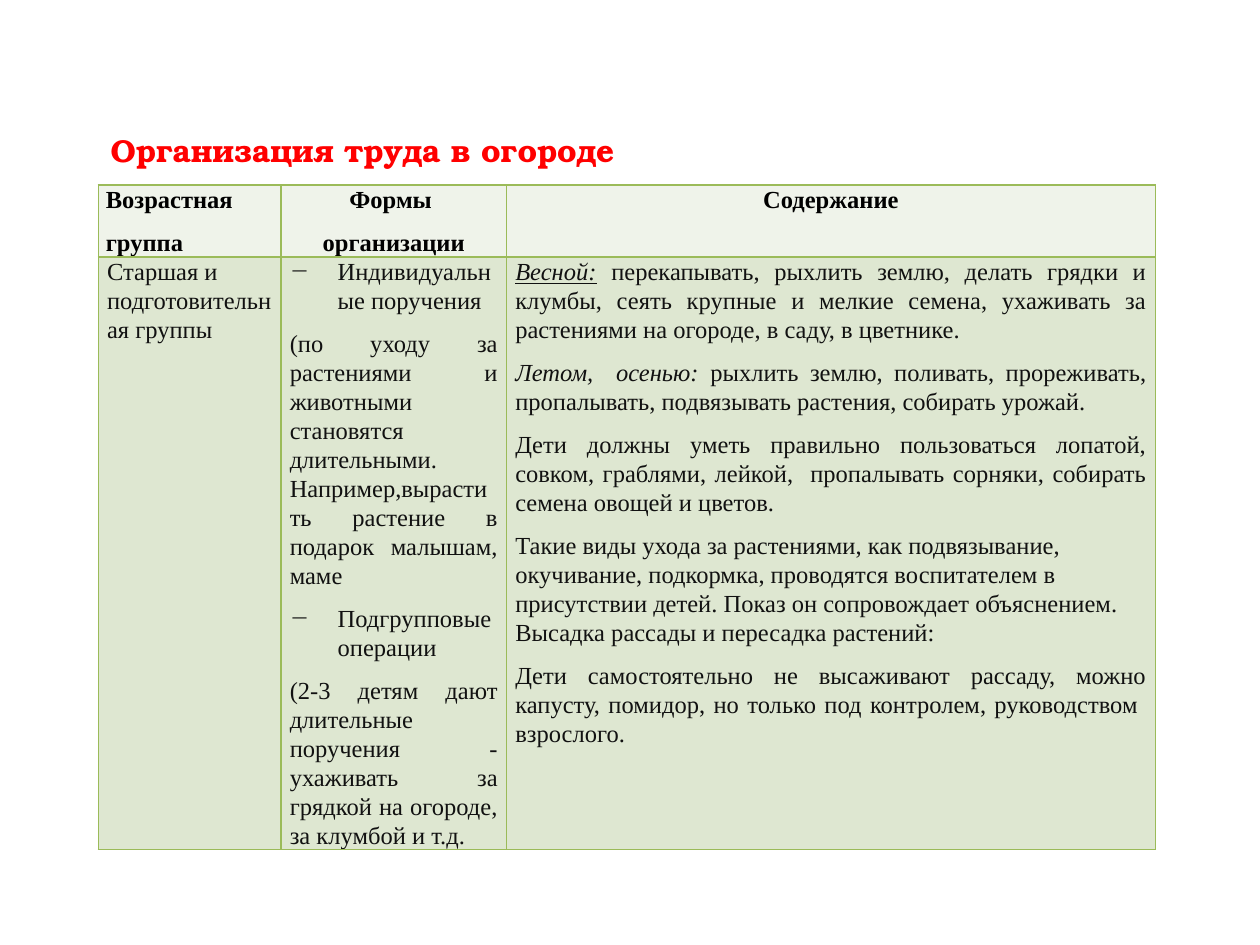
from dataclasses import dataclass

from lxml import etree
from pptx import Presentation
from pptx.dml.color import RGBColor
from pptx.enum import text
from pptx.oxml import ns
from pptx.util import Inches, Pt

HUES = {"title": "FF0000", "head": "000000", "body": "111111",
        "pale": "EFF3EA", "green": "DEE7D1", "line": "9BBB59"}
SERIF = "Times New Roman"
LEFT, MID, JUST = text.PP_ALIGN.LEFT, text.PP_ALIGN.CENTER, text.PP_ALIGN.JUSTIFY


@dataclass
class Para:
    words: str
    align: int = JUST
    lead: str = ""
    under: bool = False
    dash: bool = False


def add(parent, tag: str, **attrs):
    return etree.SubElement(parent, ns.qn(tag), attrs)


def write(frame, paras: list[Para], *, size: float = 14, font: str = SERIF,
          hue: str = "body", bold: bool = False, space: float = 1.07,
          after: float = 8) -> None:
    for n, item in enumerate(paras):
        para = frame.paragraphs[0] if n == 0 else frame.add_paragraph()
        para.alignment = item.align
        para.line_spacing = space
        para.space_after = Pt(after)
        if item.dash:
            props = para._p.get_or_add_pPr()
            props.set("marL", str(Inches(0.38)))
            props.set("indent", str(-Inches(0.38)))
            add(props, "a:buChar", char="─")
        for words, lead in ((item.lead, True), (item.words, False)):
            if not words:
                continue
            run = para.add_run()
            run.text = words
            run.font.size = Pt(size)
            run.font.name = font
            run.font.bold = bold
            run.font.italic = lead
            run.font.underline = lead and item.under
            run.font.color.rgb = RGBColor.from_string(HUES[hue])


def dress(cell, hue: str, side: float) -> None:
    cell.margin_left = cell.margin_right = Inches(side)
    cell.margin_top = cell.margin_bottom = 0
    props = cell._tc.get_or_add_tcPr()
    for edge in ("a:lnL", "a:lnR", "a:lnT", "a:lnB"):
        line = add(props, edge, w=str(Pt(1)))
        add(add(line, "a:solidFill"), "a:srgbClr", val=HUES["line"])
    cell.fill.solid()
    cell.fill.fore_color.rgb = RGBColor.from_string(HUES[hue])


HEADS = [
    [Para("Возрастная", LEFT), Para("группа", LEFT)],
    [Para("Формы ", MID), Para("организации", MID)],
    [Para("Содержание", MID)],
]
BODY = [
    [Para("Старшая и подготовительная группы", LEFT)],
    [
        Para("Индивидуальные поручения", dash=True),
        Para("(по уходу за растениями и животными становятся длительными. "
             "Например,вырастить растение в подарок малышам, маме"),
        Para("Подгрупповые операции ", dash=True),
        Para("(2-3 детям дают длительные поручения - ухаживать за грядкой "
             "на огороде, за клумбой и т.д."),
    ],
    [
        Para(" перекапывать, рыхлить землю, делать грядки и клумбы, сеять "
             "крупные и мелкие семена, ухаживать за растениями на огороде, "
             "в саду, в цветнике.", lead="Весной:", under=True),
        Para("рыхлить землю, поливать, прореживать, пропалывать, подвязывать "
             "растения, собирать урожай.", lead="Летом,  осенью: "),
        Para("Дети должны уметь правильно пользоваться лопатой, совком, "
             "граблями, лейкой,  пропалывать сорняки, собирать семена овощей "
             "и цветов. "),
        Para("Такие виды ухода за растениями, как подвязывание, окучивание, "
             "подкормка, проводятся воспитателем в присутствии детей. Показ "
             "он сопровождает объяснением. Высадка рассады и пересадка "
             "растений:", LEFT),
        Para("Дети самостоятельно не высаживают рассаду, можно капусту, "
             "помидор, но только под контролем, руководством  взрослого."),
    ],
]


def main() -> None:
    deck = Presentation()
    deck.slide_width, deck.slide_height = Inches(10), Inches(7.5)
    slide = deck.slides.add_slide(deck.slide_layouts[6])

    grid = slide.shapes.add_table(2, 3, Inches(0.78), Inches(1.47),
                                  Inches(8.39), Inches(5.27)).table
    for col, width in zip(grid.columns, (1.45, 1.79, 5.15)):
        col.width = Inches(width)
    for row, height in zip(grid.rows, (0.57, 4.7)):
        row.height = Inches(height)
    for col, (head, body) in enumerate(zip(HEADS, BODY)):
        top, low = grid.cell(0, col), grid.cell(1, col)
        dress(top, "pale", 0.06)
        write(top.text_frame, head, hue="head", bold=True)
        dress(low, "green", 0.07)
        write(low.text_frame, body)

    frame = slide.shapes.add_textbox(Inches(0.78), Inches(0.99),
                                     Inches(4.38), Inches(0.4)).text_frame
    frame.word_wrap = False
    frame.auto_size = text.MSO_AUTO_SIZE.SHAPE_TO_FIT_TEXT
    frame.vertical_anchor = text.MSO_ANCHOR.MIDDLE
    write(frame, [Para("Организация труда в огороде")], size=18,
          font="TeX Gyre Bonum", hue="title", bold=True, space=1, after=0)

    deck.save("out.pptx")


if __name__ == "__main__":
    main()
